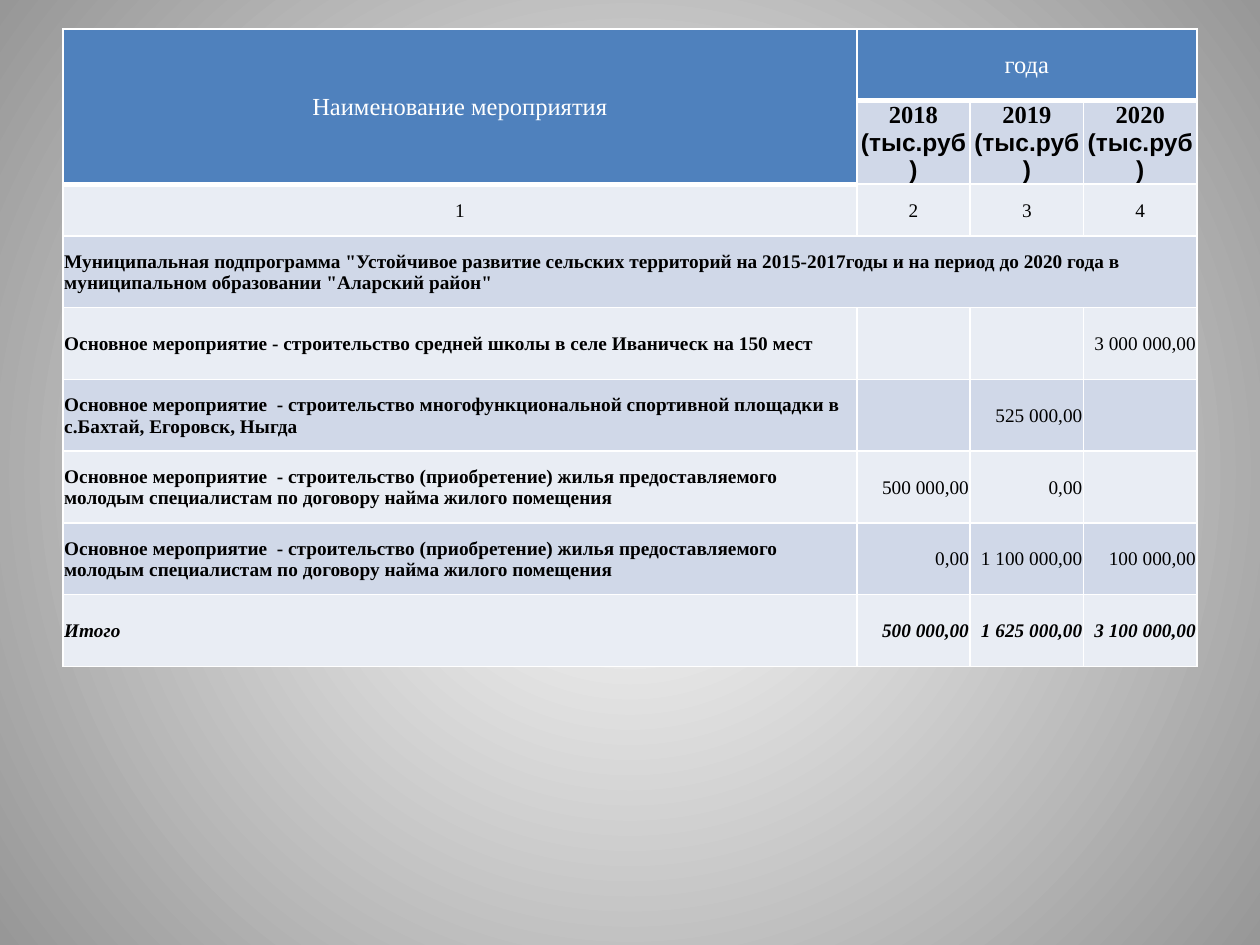
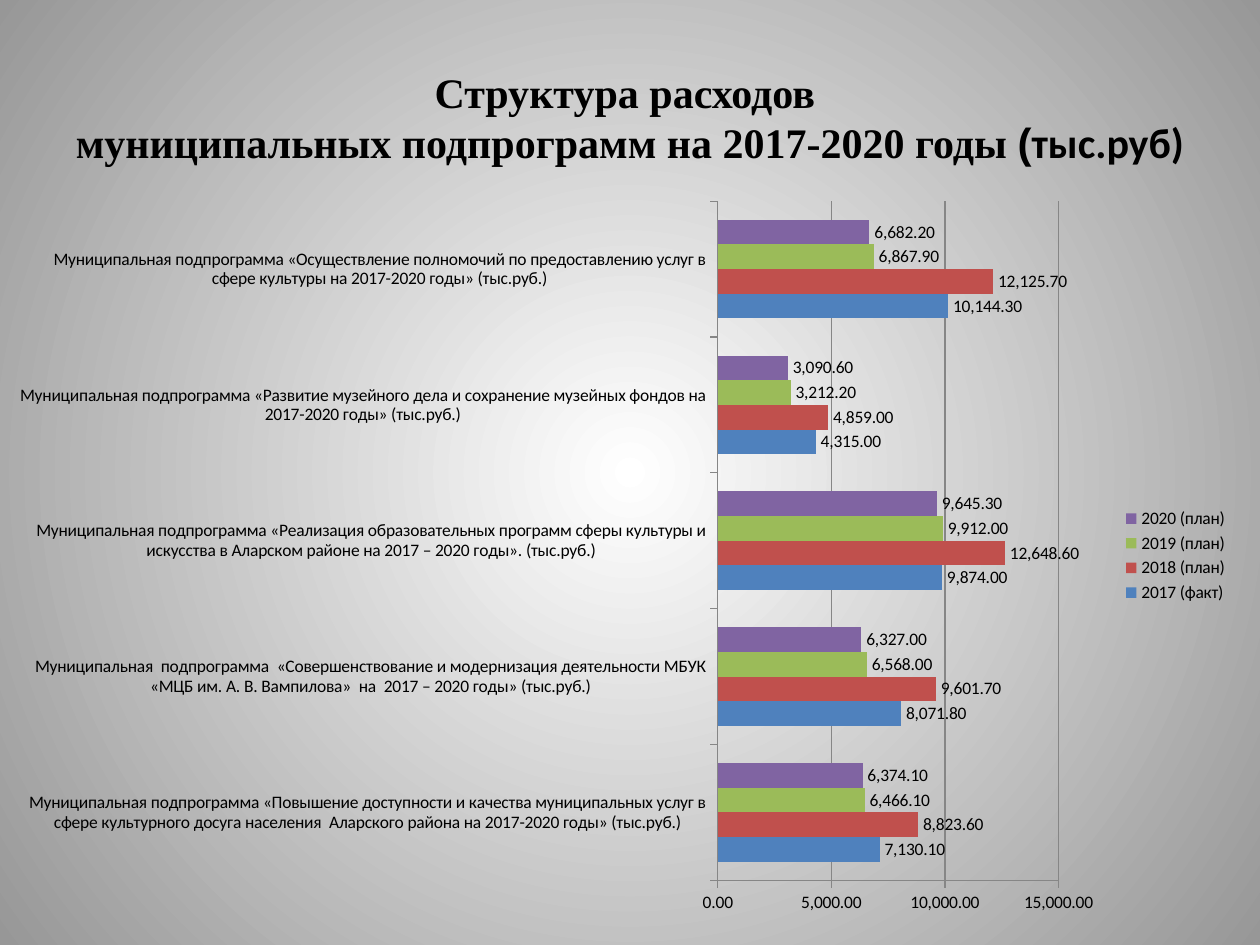
"""Build two slides on municipal subprogramme spending: a table and a bar chart."""
import dataclasses

import pptx
import pptx.chart.data
import pptx.dml.color
import pptx.enum.chart
import pptx.enum.text
import pptx.oxml
import pptx.oxml.ns
import pptx.util

Inches = pptx.util.Inches
Pt = pptx.util.Pt
ALIGN = pptx.enum.text.PP_ALIGN
MIDDLE = pptx.enum.text.MSO_ANCHOR.MIDDLE
CHART = pptx.enum.chart
NS = pptx.oxml.ns.nsdecls


@dataclasses.dataclass(frozen=True)
class Theme:
    """Colours, fonts and type sizes."""
    white: str = "FFFFFF"
    black: str = "000000"
    edge: str = "979797"
    grid: str = "868686"
    header: str = "4F81BD"
    bands: tuple = ("E9EDF4", "D0D8E8")
    series: tuple = ("4F81BD", "C0504D", "9BBB59", "8064A2")
    serif: str = "Times New Roman"
    sans: str = "Arial"
    chart_font: str = "Calibri"
    title_size: int = 24
    header_size: int = 14
    cell_size: int = 11
    chart_size: int = 10


def rgb(value):
    """Turn a hex string into a colour."""
    return pptx.dml.color.RGBColor.from_string(value)


def apply(obj, values):
    """Set every attribute in a dict of format values."""
    for name, value in values.items():
        setattr(obj, name, value)


class Deck:
    """Holds the theme, the presentation and the current slide."""

    def __init__(self, theme):
        self.t = theme
        self.prs = pptx.Presentation()
        apply(self.prs, {"slide_width": Inches(10), "slide_height": Inches(7.5)})
        self.s = None
        self.background()

    def background(self):
        """Give the master a round gradient from white to grey."""
        master = self.prs.slide_master
        fill = master.background.fill
        fill.gradient()
        for stop, color in zip(fill.gradient_stops, (self.t.white, self.t.edge)):
            stop.color.rgb = rgb(color)
        grad = master.element.xpath(".//p:bg//a:gradFill")[0]
        for lin in grad.xpath("a:lin"):
            grad.remove(lin)
        grad.append(pptx.oxml.parse_xml(
            f'<a:path {NS("a")} path="circle">'
            '<a:fillToRect l="50000" t="50000" r="50000" b="50000"/></a:path>'))

    def slide(self, layout):
        """Add a slide and make it current."""
        self.s = self.prs.slides.add_slide(self.prs.slide_layouts[layout])

    def run(self, p, text, color, **values):
        """Add a formatted run, with a line break at each newline."""
        for i, line in enumerate(text.split("\n")):
            if i:
                p.add_line_break()
            r = p.add_run()
            r.text = line
            apply(r.font, values)
            r.font.color.rgb = rgb(color)

    def title(self, box, runs):
        """Fill the title placeholder with (text, font) runs."""
        sp = self.s.shapes.title
        apply(sp, dict(zip(("left", "top", "width", "height"), map(Inches, box))))
        tf = sp.text_frame
        apply(tf, {"vertical_anchor": MIDDLE, "word_wrap": True})
        p = tf.paragraphs[0]
        p.alignment = ALIGN.CENTER
        for text, font in runs:
            self.run(p, text, self.t.black, name=font, bold=True, size=Pt(self.t.title_size))

    def table(self, box, widths, heights):
        """Add an empty table with the given column widths and row heights."""
        table = self.s.shapes.add_table(
            len(heights), len(widths), *map(Inches, box)).table
        for col, width in zip(table.columns, widths):
            col.width = Inches(width)
        for row, height in zip(table.rows, heights):
            row.height = Inches(height)
        return table

    def cell(self, cell, fill, top=1, bottom=1):
        """Set the fill, insets and borders of a cell."""
        apply(cell, {"margin_left": Inches(0.01), "margin_right": Inches(0.01),
                     "margin_top": Inches(0.01), "margin_bottom": 0,
                     "vertical_anchor": MIDDLE})
        cell.fill.solid()
        cell.fill.fore_color.rgb = rgb(fill)
        tcPr = cell._tc.get_or_add_tcPr()
        for i, (side, width) in enumerate(zip("LRTB", (1, 1, top, bottom))):
            tcPr.insert(i, pptx.oxml.parse_xml(
                f'<a:ln{side} {NS("a")} w="{Pt(width)}"><a:solidFill>'
                f'<a:srgbClr val="{self.t.white}"/></a:solidFill></a:ln{side}>'))

    def cell_text(self, cell, text, align, color=None, **values):
        """Write one paragraph in a cell."""
        p = cell.text_frame.paragraphs[0]
        p.alignment = align
        style = {"name": self.t.serif, "size": Pt(self.t.cell_size), **values}
        self.run(p, text, color or self.t.black, **style)

    def bar_chart(self, box, plot_box, cats, series):
        """Add a clustered bar chart with a fixed plot area."""
        data = pptx.chart.data.CategoryChartData(number_format="#,##0.00")
        data.categories = cats
        for name, values in series.items():
            data.add_series(name, values)
        chart = self.s.shapes.add_chart(
            CHART.XL_CHART_TYPE.BAR_CLUSTERED, *map(Inches, box), data).chart
        apply(chart, {"has_title": False, "has_legend": True})
        apply(chart.font, {"name": self.t.chart_font, "size": Pt(self.t.chart_size)})
        chart.font.color.rgb = rgb(self.t.black)
        apply(chart.legend, {"position": CHART.XL_LEGEND_POSITION.RIGHT,
                             "include_in_layout": False})
        plot = chart.plots[0]
        apply(plot, {"gap_width": 150, "vary_by_categories": False, "has_data_labels": True})
        apply(plot.data_labels, {"show_value": True, "number_format": "#,##0.00",
                                 "number_format_is_linked": False})
        for ser, color in zip(plot.series, self.t.series):
            ser.format.fill.solid()
            ser.format.fill.fore_color.rgb = rgb(color)
            ser.invert_if_negative = False
        value_axis = chart.value_axis
        apply(value_axis, {"minimum_scale": 0, "maximum_scale": 15000,
                           "major_unit": 5000, "has_major_gridlines": True})
        apply(value_axis.tick_labels, {"number_format": "#,##0.00",
                                       "number_format_is_linked": False})
        for axis in (value_axis, chart.category_axis):
            axis.major_tick_mark = CHART.XL_TICK_MARK.OUTSIDE
        for part in (value_axis, chart.category_axis, value_axis.major_gridlines):
            part.format.line.color.rgb = rgb(self.t.grid)
            part.format.line.width = Pt(0.75)
        area = chart._chartSpace.xpath(".//c:plotArea")[0]
        for old in area.xpath("c:layout"):
            area.remove(old)
        sizes = "".join(f'<c:{k} val="{v}"/>' for k, v in zip("xywh", plot_box))
        area.insert(0, pptx.oxml.parse_xml(
            f'<c:layout {NS("c")}><c:manualLayout><c:layoutTarget val="inner"/>'
            f'<c:xMode val="edge"/><c:yMode val="edge"/>{sizes}'
            '</c:manualLayout></c:layout>'))


def spending_table(deck):
    """Build the table of measures by year."""
    t = deck.t
    deck.slide(6)
    housing = ("Основное мероприятие  - строительство (приобретение) жилья предоставляемого "
               "молодым специалистам по договору найма жилого помещения")
    rows = [
        ("1", "2", "3", "4"),
        ('Муниципальная подпрограмма "Устойчивое развитие сельских территорий на '
         '2015-2017годы и на период до 2020 года в муниципальном образовании '
         '"Аларский район"', "", "", ""),
        ("Основное мероприятие - строительство средней школы в селе Иваническ на 150 мест",
         "", "", "3 000 000,00"),
        ("Основное мероприятие  - строительство многофункциональной спортивной площадки в "
         "с.Бахтай, Егоровск, Ныгда", "", "525 000,00", ""),
        (housing, "500 000,00", "0,00", ""),
        (housing, "0,00", "1 100 000,00", "100 000,00"),
        ("Итого", "500 000,00", "1 625 000,00", "3 100 000,00"),
    ]
    heights = [0.57] * 2 + [0.41] + [0.57] * 6
    table = deck.table((0.5, 0.23, 9, 4.97), [6.3] + [0.9] * 3, heights)
    header = {(0, c) for c in range(4)} | {(1, 0)}
    for r in range(len(heights)):
        for c in range(4):
            in_header = (r, c) in header
            deck.cell(table.cell(r, c), t.header if in_header else t.bands[r % 2],
                      top=3 if (r - 1, c) in header else 1, bottom=3 if in_header else 1)
    for start, end in (((0, 0), (1, 0)), ((0, 1), (0, 3)), ((3, 0), (3, 3))):
        table.cell(*start).merge(table.cell(*end))

    head = {"size": Pt(t.header_size)}
    for c, text in enumerate(("Наименование мероприятия", "года")):
        deck.cell_text(table.cell(0, c), text, ALIGN.CENTER, t.white, bold=False, **head)
    for c, year in enumerate(("2018 ", "2019", "2020"), 1):
        cell = table.cell(1, c)
        deck.cell_text(cell, year, ALIGN.CENTER, bold=True, **head)
        p = cell.text_frame.paragraphs[0] if c == 1 else cell.text_frame.add_paragraph()
        p.alignment = ALIGN.CENTER
        deck.run(p, "(тыс.руб)", t.black, name=t.sans, bold=True, **head)
    for r, row in enumerate(rows, 2):
        numbers, total = r == 2, r == len(heights) - 1
        for c, text in enumerate(row):
            if text:
                side = ALIGN.RIGHT if c else ALIGN.LEFT
                deck.cell_text(table.cell(r, c), text, ALIGN.CENTER if numbers else side,
                               bold=total or (c == 0 and not numbers), italic=total)


def spending_chart(deck):
    """Build the chart of subprogramme spending."""
    t = deck.t
    deck.slide(5)
    deck.title((0.5, 0.3, 9, 1.25), [
        ("Структура расходов \nмуниципальных подпрограмм на 2017-2020 годы ", t.serif),
        ("(", t.sans), ("тыс.руб)", t.chart_font)])
    cats = [
        "Муниципальная подпрограмма «Повышение доступности и качества муниципальных услуг в "
        "сфере культурного досуга населения  Аларского района на 2017-2020 годы» (тыс.руб.)",
        "Муниципальная  подпрограмма  «Совершенствование и модернизация деятельности МБУК "
        "«МЦБ им. А. В. Вампилова»  на  2017 – 2020 годы» (тыс.руб.)",
        "Муниципальная подпрограмма «Реализация образовательных программ сферы культуры и "
        "искусства в Аларском районе на 2017 – 2020 годы». (тыс.руб.)",
        "Муниципальная подпрограмма «Развитие музейного дела и сохранение музейных фондов на "
        "2017-2020 годы» (тыс.руб.)",
        "Муниципальная подпрограмма «Осуществление полномочий по предоставлению услуг в "
        "сфере культуры на 2017-2020 годы» (тыс.руб.)",
    ]
    series = {
        "2017 (факт)": (7130.1, 8071.8, 9874, 4315, 10144.3),
        "2018 (план)": (8823.6, 9601.7, 12648.6, 4859, 12125.7),
        "2019 (план)": (6466.1, 6568, 9912, 3212.2, 6867.9),
        "2020 (план)": (6374.1, 6327, 9645.3, 3090.6, 6682.2),
    }
    deck.bar_chart((0.16, 1.48, 9.69, 5.86), (0.57, 0.02, 0.28, 0.92), cats, series)


def main():
    """Build and save both slides."""
    deck = Deck(Theme())
    spending_table(deck)
    spending_chart(deck)
    deck.prs.save("out.pptx")


if __name__ == "__main__":
    main()
